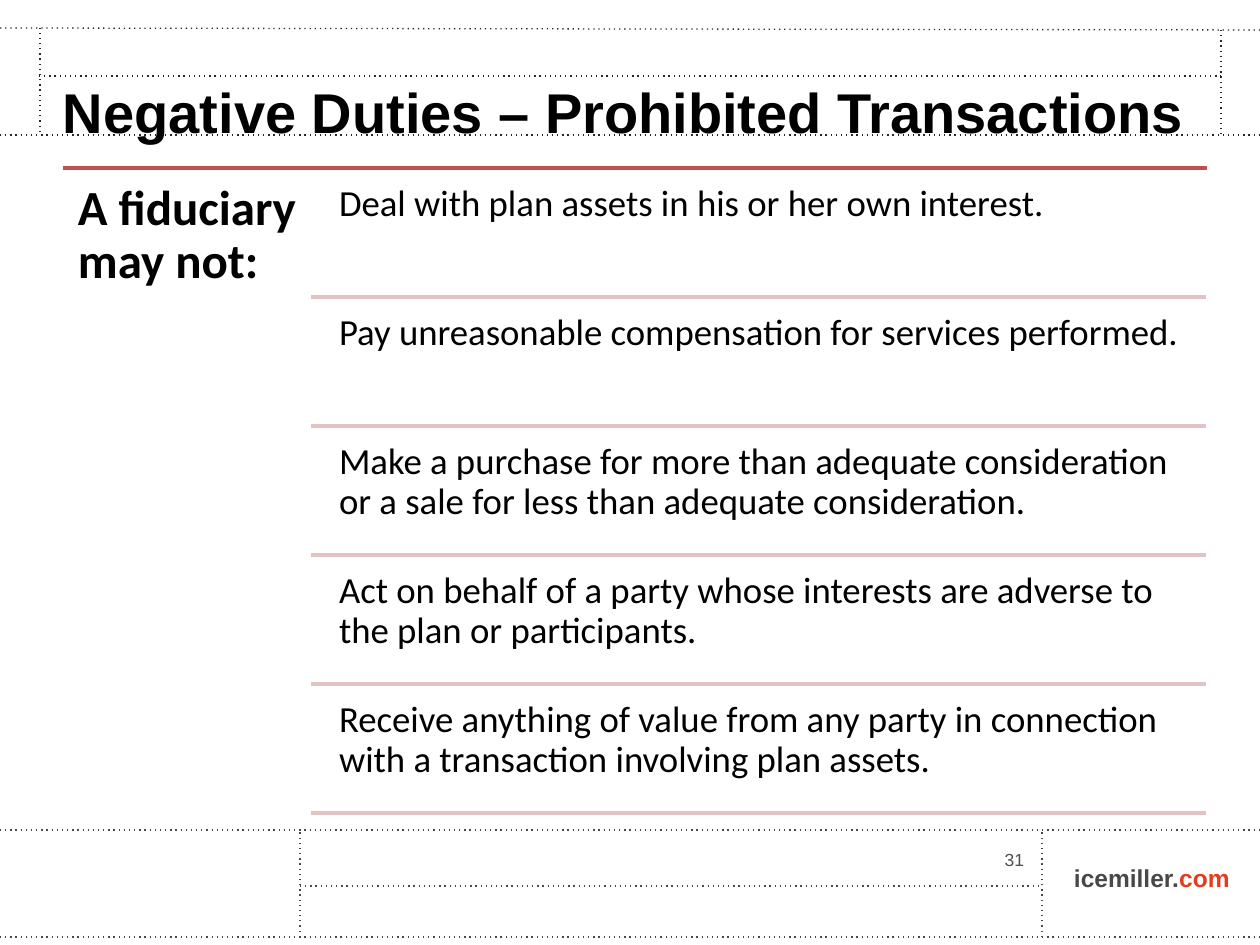
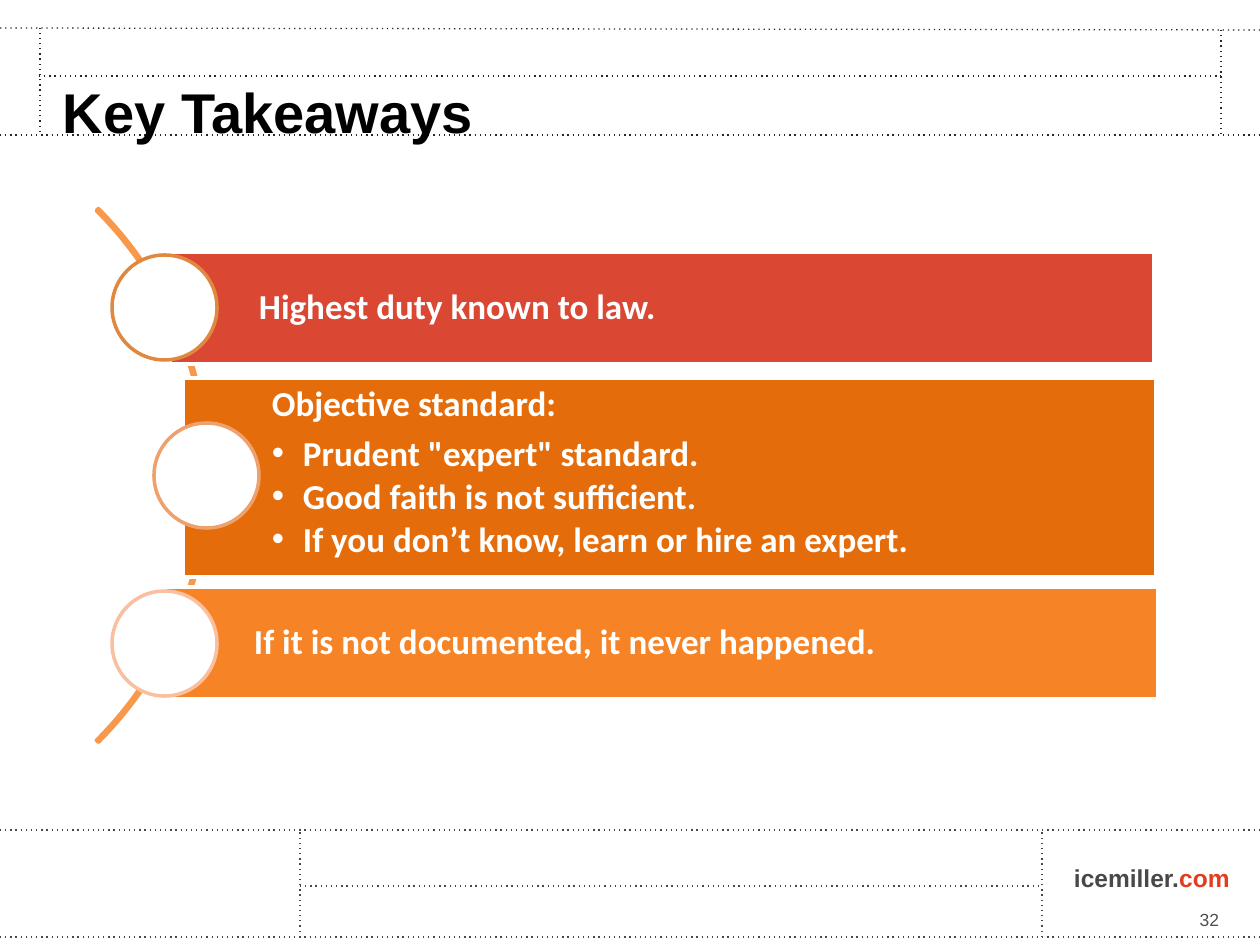
from lxml import etree
from pptx import Presentation
from pptx.dml.color import RGBColor
from pptx.enum.dml import MSO_LINE
from pptx.enum.shapes import MSO_CONNECTOR, MSO_SHAPE
from pptx.enum.text import MSO_ANCHOR, PP_ALIGN
from pptx.oxml.ns import qn
from pptx.util import Pt

STRAIGHT = MSO_CONNECTOR.STRAIGHT
RECTANGLE, OVAL, BLOCK_ARC = MSO_SHAPE.RECTANGLE, MSO_SHAPE.OVAL, MSO_SHAPE.BLOCK_ARC
TOP, MIDDLE, BOTTOM = MSO_ANCHOR.TOP, MSO_ANCHOR.MIDDLE, MSO_ANCHOR.BOTTOM
LEFT, RIGHT = PP_ALIGN.LEFT, PP_ALIGN.RIGHT
DOTTED = MSO_LINE.ROUND_DOT

EMU_PER_PX = 914400 / 126
HEADING, BODY = "Arial", "Calibri"
BLACK, WHITE = "000000", "FFFFFF"
GRID_DARK, GRID_GRAY, PAGE_GRAY = "262626", "484848", "505050"
SITE_RED, RULE_RED, RULE_PINK, ARC_ORANGE = "E33D1F", "C0504D", "E2C2C2", "F7984B"

HEADER_GRID = [(40, 132, 40, 28), (1221, 30, 1221, 135), (0, 135, 1260, 135),
               (0, 28, 1260, 30), (39, 76, 1221, 76)]
FOOTER_GRID = [(0, 830, 1260, 830), (0, 937, 1260, 937), (1042, 937, 1042, 830),
               (300, 886, 1042, 886), (300, 937, 300, 830)]


def px(length):
    return round(length * EMU_PER_PX)


def rgb(color):
    return RGBColor.from_string(color)


def add_bullet(paragraph, indent):
    properties = paragraph._p.get_or_add_pPr()
    properties.set("marL", str(px(indent)))
    properties.set("indent", str(-px(indent)))
    etree.SubElement(properties, qn("a:buFont"), typeface="Arial")
    etree.SubElement(properties, qn("a:buChar"), char="•")


def write(paragraph, text, *, size, font=BODY, color=BLACK, bold=False,
          align=LEFT, spacing=None, after=0, bullet_indent=0):
    """Add one run to a paragraph and format both."""
    paragraph.alignment = align
    if spacing:
        paragraph.line_spacing = spacing
    paragraph.space_after = Pt(after)
    if bullet_indent:
        add_bullet(paragraph, bullet_indent)
    run = paragraph.add_run()
    run.text = text
    run.font.name, run.font.size, run.font.bold = font, Pt(size), bold
    run.font.color.rgb = rgb(color)


class Deck:
    def __init__(self):
        self.presentation = Presentation()
        self.presentation.slide_width = px(1260)
        self.presentation.slide_height = px(945)
        self.slide = None

    def line(self, x1, y1, x2, y2, color, width=2, dotted=False):
        line = self.slide.shapes.add_connector(STRAIGHT, px(x1), px(y1), px(x2), px(y2))
        line.line.color.rgb = rgb(color)
        line.line.width = Pt(width)
        if dotted:
            line.line.dash_style = DOTTED
            line._element.find(".//" + qn("a:prstDash")).set("val", "dot")
        etree.SubElement(line._element.spPr, qn("a:effectLst"))

    def frame(self, shape, insets, anchor, wrap=True):
        frame = shape.text_frame
        frame.word_wrap = wrap
        frame.vertical_anchor = anchor
        (frame.margin_left, frame.margin_top,
         frame.margin_right, frame.margin_bottom) = map(px, insets)
        return frame

    def text_box(self, box, text, *, insets=(13, 6, 13, 6), anchor=TOP, wrap=True, **style):
        shape = self.slide.shapes.add_textbox(*map(px, box))
        paragraph = self.frame(shape, insets, anchor, wrap).paragraphs[0]
        write(paragraph, text, **style)
        return paragraph

    def shape(self, kind, box, line, fill=None):
        shape = self.slide.shapes.add_shape(kind, *map(px, box))
        shape.shadow.inherit = False
        if fill:
            shape.fill.solid()
            shape.fill.fore_color.rgb = rgb(fill)
        else:
            shape.fill.background()
        shape.line.color.rgb = rgb(line)
        shape.line.width = Pt(2)
        return shape

    def takeaway(self, box, fill, heading, points):
        bar = self.shape(RECTANGLE, box, WHITE, fill)
        frame = self.frame(bar, (89, 8, 8, 8), TOP if points else MIDDLE)
        style = dict(size=20, color=WHITE, bold=True, spacing=0.9)
        write(frame.paragraphs[0], heading, after=7, **style)
        for point in points:
            write(frame.add_paragraph(), point, after=3, bullet_indent=31, **style)

    def page(self, title, number, number_at):
        """Start a slide with the shared grid, web address, number and title."""
        self.slide = self.presentation.slides.add_slide(self.presentation.slide_layouts[6])
        for grid, color in ((FOOTER_GRID, GRID_GRAY), (HEADER_GRID, GRID_DARK)):
            for ends in grid:
                self.line(*ends, color, 0.75, dotted=True)
        site_style = dict(size=14, font=HEADING, bold=True)
        site = self.text_box((1061, 857, 184, 43), "icemiller.", wrap=False,
                             color=GRID_GRAY, **site_style)
        write(site, "com", color=SITE_RED, **site_style)
        self.text_box((*number_at, 291, 50), number, anchor=MIDDLE, size=10,
                      font=HEADING, color=PAGE_GRAY, align=RIGHT)
        self.text_box((63, 32, 1134, 113), title, insets=(0, 0, 0, 0), anchor=BOTTOM,
                      size=32, font=HEADING, bold=True, spacing=Pt(34))


def add_prohibited_transactions(deck):
    deck.page("Negative Duties – Prohibited Transactions", "31", (746, 835))
    deck.line(63, 168, 1207, 168, RULE_RED)
    deck.text_box((63, 168, 248, 651), "A fiduciary may not:", insets=(15,) * 4,
                  size=28, bold=True, spacing=0.9)
    prohibitions = [
        "Deal with plan assets in his or her own interest.",
        "Pay unreasonable compensation for services performed.",
        "Make a purchase for more than adequate consideration or a sale for less "
        "than adequate consideration.",
        "Act on behalf of a party whose interests are adverse to the plan or participants.",
        "Receive anything of value from any party in connection with a transaction "
        "involving plan assets.",
    ]
    for row, prohibition in enumerate(prohibitions):
        top = 174 + 129 * row
        deck.text_box((328, top, 878, 122), prohibition, insets=(11,) * 4,
                      size=21, spacing=0.9)
        deck.line(311, top + 123, 1206, top + 123, RULE_PINK)


def add_key_takeaways(deck):
    deck.page("Key Takeaways", "32", (941, 895))
    # Arc behind the bars, from 315 to 45 degrees
    arc = deck.shape(BLOCK_ARC, (-546, 98, 755, 755), ARC_ORANGE)
    for index, value in enumerate((189, 27, 0.004)):
        arc.adjustments[index] = value
    # Bars, each with a circle at its left end
    takeaways = [
        ((170, 252, 984, 112), "DA4733", 112, "E08840", "Highest duty known to law.", []),
        ((183, 378, 973, 199), "E46C0A", 154, "EFA16D", "Objective standard:",
         ['Prudent "expert" standard.', "Good faith is not sufficient.",
          "If you don’t know, learn or hire an expert."]),
        ((165, 587, 993, 112), "F68426", 112, "FABF9F",
         "If it is not documented, it never happened.", []),
    ]
    for row, (box, fill, circle_left, ring, heading, points) in enumerate(takeaways):
        deck.takeaway(box, fill, heading, points)
        deck.shape(OVAL, (circle_left, 255 + 168 * row, 105, 105), ring, WHITE)


def main():
    deck = Deck()
    add_prohibited_transactions(deck)
    add_key_takeaways(deck)
    deck.presentation.save("out.pptx")


if __name__ == "__main__":
    main()
